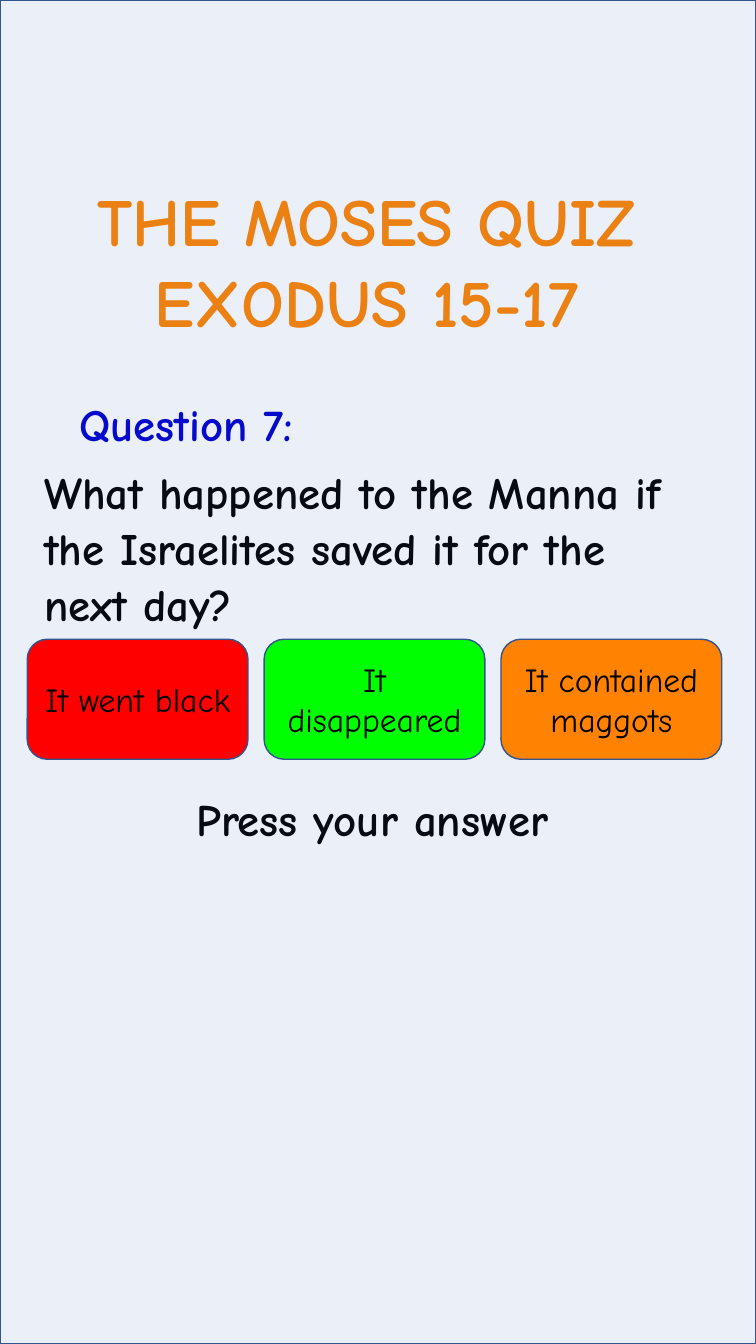
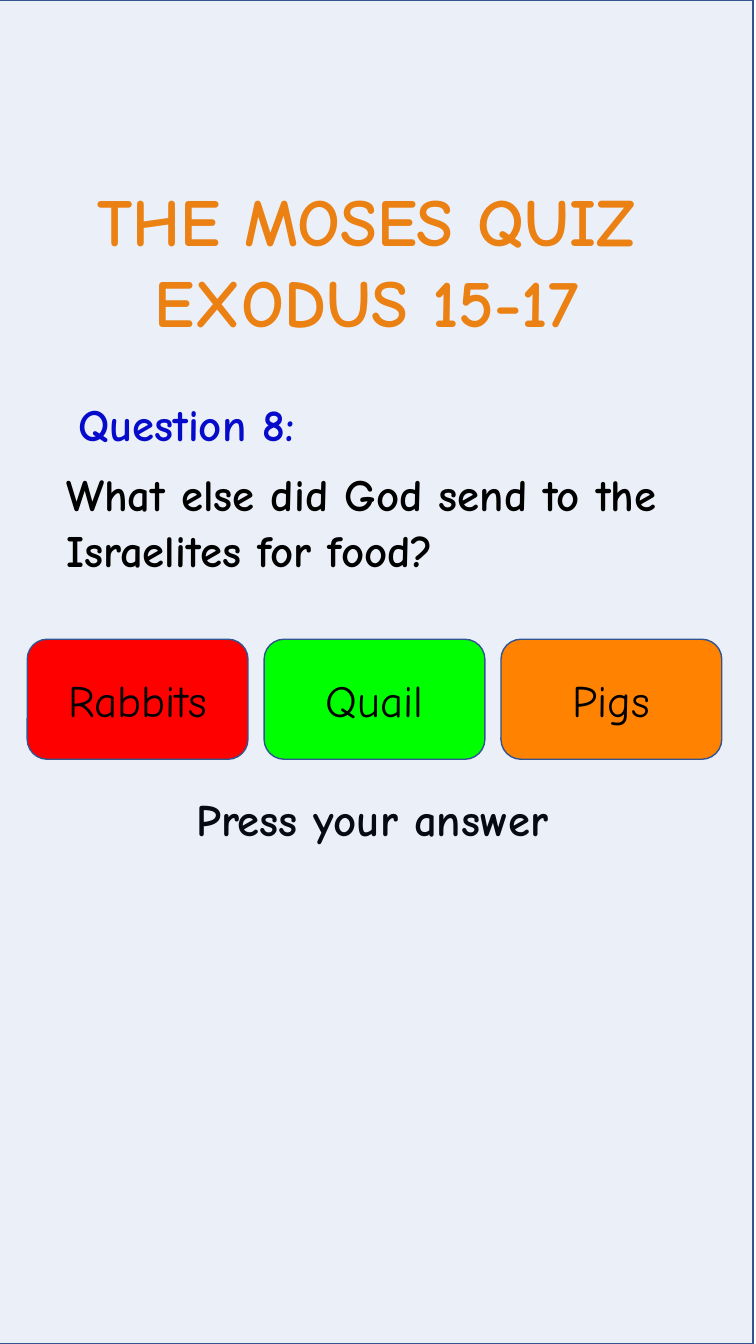
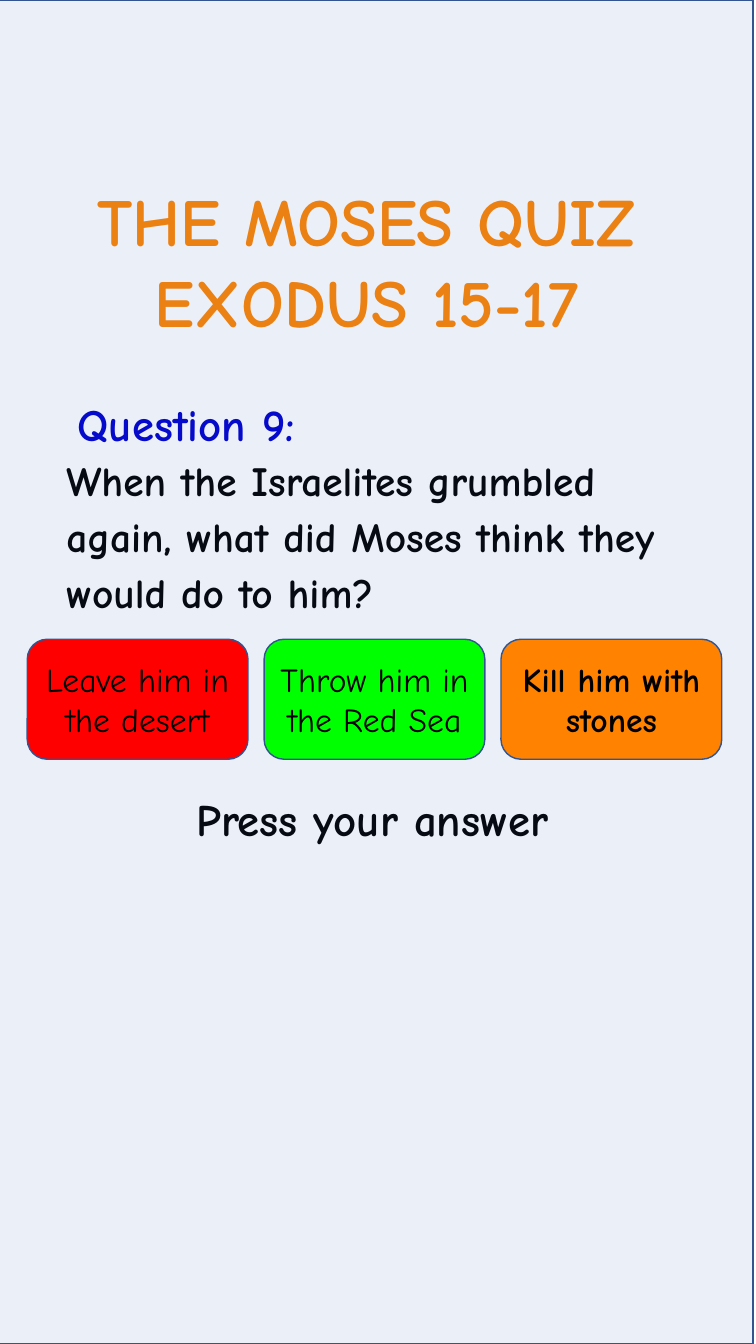
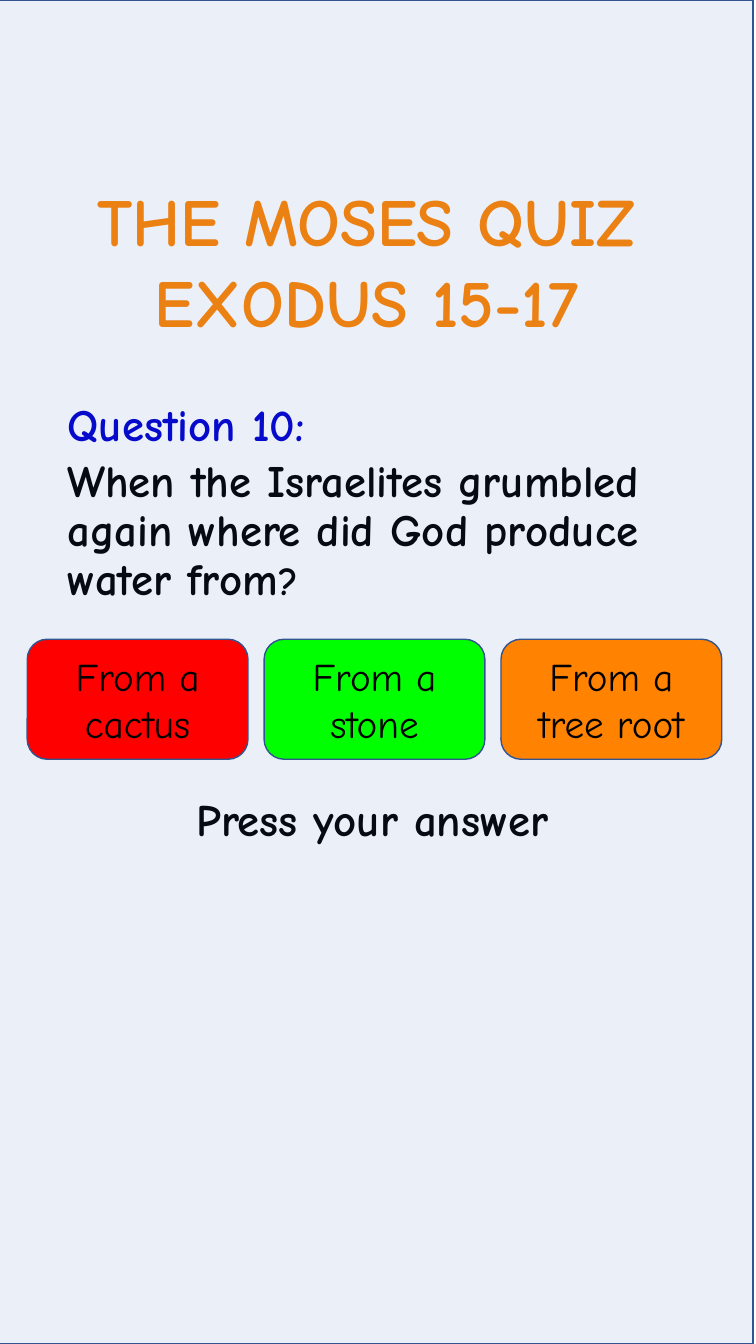
from pptx import Presentation
from pptx.dml.color import RGBColor
from pptx.enum.shapes import MSO_SHAPE
from pptx.enum.text import MSO_ANCHOR, MSO_AUTO_SIZE, PP_ALIGN
from pptx.oxml.ns import qn
from pptx.util import Inches, Pt

RECTANGLE, ROUNDED = MSO_SHAPE.RECTANGLE, MSO_SHAPE.ROUNDED_RECTANGLE
TOP, MIDDLE = MSO_ANCHOR.TOP, MSO_ANCHOR.MIDDLE
LEFT, CENTER = PP_ALIGN.LEFT, PP_ALIGN.CENTER
NO_AUTOFIT = MSO_AUTO_SIZE.NONE

PAGE_WIDTH, PAGE_HEIGHT = 7.5, 13.33
FONT = "Comic Neue"
COLORS = {
    "title": "FF8200",
    "label": "0000CC",
    "text": "000000",
    "tint": "4472C4",
    "outline": "325491",
    "answer_1": "FF0000",
    "answer_2": "00FF00",
    "answer_3": "FF8200",
}
TITLE_LINES = ["THE MOSES QUIZ", "EXODUS 15-17"]
PROMPT = "Press your answer"

# Boxes are left, top, width, height in inches
TITLE_BOX = (0.19, 1.73, 6.89, 1.72)
LABEL_BOX = (0.33, 3.89, 3.04, 0.64)
ANSWERS_BOX = (0.27, 6.34, 6.89, 1.19)
PROMPT_BOX = (1.85, 7.86, 4.22, 0.72)
ANSWER_GAP = 0.16

QUESTIONS = [
    {
        "label": "Question 7:",
        "box": (0.34, 4.54, 6.7, 1.77),
        "spans": [("What happened to the Manna if the Israelites "
                   "saved it for the next day?", 32)],
        "spacing": Pt(40),
        "answers": ["It went black", "It disappeared", "It contained maggots"],
        "answer_size": 24,
        "tint_left": 0,
    },
    {
        "label": "Question 8:",
        "box": (0.56, 4.56, 6.36, 1.46),
        "spans": [("What else did God send to the Israelites for food?", 32)],
        "spacing": Pt(40),
        "answers": ["Rabbits", "Quail", "Pigs"],
        "answer_size": 32,
        "above_tint": True,
    },
    {
        "label": "Question 9:",
        "box": (0.56, 4.4, 6.36, 1.93),
        "spans": [("When the Israelites grumbled again, what did Moses "
                   "think they would do to him?", 29.6)],
        "spacing": Pt(40),
        "answers": ["Leave him in the desert", "Throw him in the Red Sea",
                    "Kill him with stones"],
        "answer_size": 24,
        "bold_answer": "Kill him with stones",
    },
    {
        "label": "Question 10:",
        "box": (0.57, 4.49, 6.36, 1.68),
        "spans": [("When the Israelites grumbled again where did God "
                   "produce water from", 32), ("?", 28)],
        "spacing": Pt(35),
        "answers": ["From a cactus", "From a stone", "From a tree root"],
        "answer_size": 28,
    },
]


def color(name):
    return RGBColor.from_string(COLORS[name])


def in_inches(box):
    return [Inches(length) for length in box]


def set_frame(frame, anchor=TOP, wrap=True):
    values = {"vertical_anchor": anchor, "word_wrap": wrap,
              "auto_size": NO_AUTOFIT}
    for name, value in values.items():
        setattr(frame, name, value)


def write_para(para, spans, color_name="text", bold=True, align=LEFT,
               spacing=None):
    """Fill a paragraph with (text, size) spans."""
    para.alignment = align
    if spacing is not None:
        para.line_spacing = spacing
    for text, size in spans:
        span = para.add_run()
        span.text = text
        for name, value in {"name": FONT, "size": Pt(size), "bold": bold}.items():
            setattr(span.font, name, value)
        span.font.color.rgb = color(color_name)


def add_text(page, box, spans, wrap=True, **style):
    frame = page.shapes.add_textbox(*in_inches(box)).text_frame
    set_frame(frame, wrap=wrap)
    write_para(frame.paragraphs[0], spans, **style)


def add_panel(page, kind, box, fill_name):
    panel = page.shapes.add_shape(kind, *in_inches(box))
    panel.shadow.inherit = False
    panel.fill.solid()
    panel.fill.fore_color.rgb = color(fill_name)
    panel.line.color.rgb = color("outline")
    panel.line.width = Pt(1)
    return panel


def add_title(page, box):
    title = page.shapes.title
    title.left, title.top, title.width, title.height = in_inches(box)
    frame = title.text_frame
    set_frame(frame, wrap=False)
    for index, line in enumerate(TITLE_LINES):
        para = frame.add_paragraph() if index else frame.paragraphs[0]
        write_para(para, [(line, 48)], color_name="title", align=CENTER)


def add_tint(page, left):
    """Lay a 10 % opaque sheet over the page."""
    tint = add_panel(page, RECTANGLE, (left, 0, PAGE_WIDTH, PAGE_HEIGHT), "tint")
    fill_color = tint.fill._xPr.find(qn("a:solidFill")).find(qn("a:srgbClr"))
    alpha = fill_color.makeelement(qn("a:alpha"), {"val": "10000"})
    fill_color.append(alpha)


def add_answers(page, box, answers, size, bold_answer):
    """Share the box among equal buttons."""
    left, top, width, height = box
    count = len(answers)
    button_width = (width - ANSWER_GAP * (count - 1)) / count
    for index, answer in enumerate(answers):
        button_left = left + index * (button_width + ANSWER_GAP)
        button = add_panel(page, ROUNDED, (button_left, top, button_width, height),
                           f"answer_{index + 1}")
        set_frame(button.text_frame, anchor=MIDDLE)
        write_para(button.text_frame.paragraphs[0], [(answer, size)],
                   bold=answer == bold_answer, align=CENTER)


def add_question_page(deck, question):
    page = deck.slides.add_slide(deck.slide_layouts[5])
    above_tint = question.get("above_tint", False)

    def add_question():
        add_text(page, question["box"], question["spans"],
                 spacing=question["spacing"])

    # Heading, label and texts below the tint
    add_title(page, TITLE_BOX)
    add_text(page, LABEL_BOX, [(question["label"], 32)], wrap=False,
             color_name="label", align=CENTER)
    if not above_tint:
        add_question()
    add_text(page, PROMPT_BOX, [(PROMPT, 32)], spacing=0.9)

    # Tint and the parts above it
    add_tint(page, question.get("tint_left", -0.03))
    if above_tint:
        add_question()
    add_answers(page, ANSWERS_BOX, question["answers"],
                question["answer_size"], question.get("bold_answer"))


def main():
    deck = Presentation()
    deck.slide_width = Inches(PAGE_WIDTH)
    deck.slide_height = Inches(PAGE_HEIGHT)
    for question in QUESTIONS:
        add_question_page(deck, question)
    deck.save("out.pptx")


if __name__ == "__main__":
    main()
